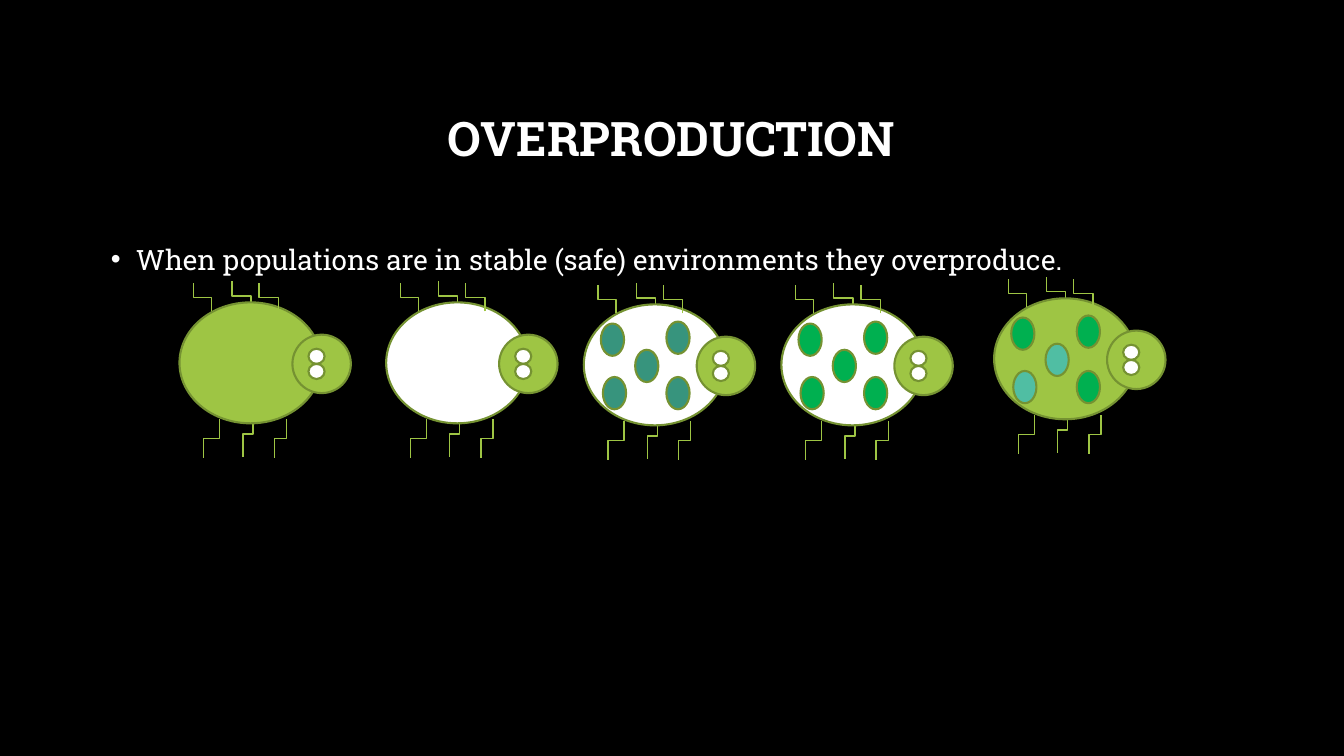
from lxml.etree import SubElement
from pptx import Presentation
from pptx.dml.color import RGBColor
from pptx.enum.shapes import MSO_CONNECTOR, MSO_SHAPE
from pptx.enum.text import MSO_ANCHOR, MSO_AUTO_SIZE, PP_ALIGN
from pptx.oxml.ns import qn
from pptx.util import Inches, Pt

TITLE = "OVERPRODUCTION"
POINT = "When populations are in stable (safe) environments they overproduce."
FONT = "Roboto Slab"
COLORS = {
    "black": "000000", "white": "FFFFFF", "lime": "9EC544", "olive": "759232",
    "teal": "37947D", "green": "00B050", "aqua": "50BEA3",
}

# Each bug: left, top, body colour, spot colours
BUGS = [
    (1.78, 3.00, "lime", []),
    (3.83, 3.00, "white", []),
    (5.79, 3.02, "white", ["teal"] * 5),
    (7.75, 3.02, "white", ["green"] * 5),
    (9.86, 2.96, "lime", ["green", "aqua", "green", "aqua", "green"]),
]

# Parts of a bug, measured from the top left of its body
BODY_SIZE, HEAD_SIZE = (1.41, 1.2), (0.58, 0.58)
EYE_SIZE, SPOT_SIZE = (0.16, 0.15), (0.23, 0.32)
HEAD = (1.12, 0.32)
EYES = [(1.28, 0.46), (1.28, 0.61)]
SPOTS = [(0.17, 0.19), (0.51, 0.45), (0.82, 0.17), (0.19, 0.72), (0.82, 0.72)]
# Legs: start x, start y, end x, end y
MIDDLE_LEGS = [(0.71, 0.08, 0.52, -0.21), (0.73, 1.08, 0.63, 1.53)]
OUTER_LEGS = [
    (0.32, 0.09, 0.14, -0.19), (0.98, 0.09, 0.79, -0.19),
    (0.40, 1.16, 0.24, 1.54), (1.06, 1.16, 0.94, 1.54),
]


def color(name):
    return RGBColor.from_string(COLORS[name])


def add_span(para, text, size, bold=False):
    span = para.add_run()
    span.text = text
    span.font.name, span.font.size, span.font.bold = FONT, Pt(size), bold
    span.font.color.rgb = color("white")


def add_oval(bug, left, top, size, fill):
    oval = bug.shapes.add_shape(
        MSO_SHAPE.OVAL, Inches(left), Inches(top), *map(Inches, size))
    oval.shadow.inherit = False
    oval.fill.solid()
    oval.fill.fore_color.rgb = color(fill)
    oval.line.color.rgb = color("olive")
    oval.line.width = Pt(1.5)


def add_leg(bug, x1, y1, x2, y2):
    """Elbow that leaves and arrives vertically: a quarter-turned connector."""
    upward = y2 < y1
    middle_x, middle_y = (x1 + x2) / 2, (y1 + y2) / 2
    half_length = abs(y2 - y1) / 2
    half_step = abs(x2 - x1) / 2 * (-1 if upward else 1)
    leg = bug.shapes.add_connector(
        MSO_CONNECTOR.ELBOW,
        Inches(middle_x - half_length), Inches(middle_y - half_step),
        Inches(middle_x + half_length), Inches(middle_y + half_step))
    leg.line.color.rgb = color("lime")
    leg.line.width = Pt(1)
    properties = leg.element.spPr
    properties.find(qn("a:xfrm")).set("rot", str((270 if upward else 90) * 60000))
    SubElement(properties, qn("a:effectLst"))


def add_bug(page, left, top, fill, spot_fills):
    bug = page.shapes.add_group_shape()

    def add_legs(legs):
        for x1, y1, x2, y2 in legs:
            add_leg(bug, left + x1, top + y1, left + x2, top + y2)

    add_legs(MIDDLE_LEGS)
    add_oval(bug, left, top, BODY_SIZE, fill)
    add_oval(bug, left + HEAD[0], top + HEAD[1], HEAD_SIZE, "lime")
    add_legs(OUTER_LEGS)
    for x, y in EYES:
        add_oval(bug, left + x, top + y, EYE_SIZE, "white")
    for (x, y), spot_fill in zip(SPOTS, spot_fills):
        add_oval(bug, left + x, top + y, SPOT_SIZE, spot_fill)


def main():
    deck = Presentation()
    deck.slide_width, deck.slide_height = Inches(13.33), Inches(7.5)
    page = deck.slides.add_slide(deck.slide_layouts[5])
    page.background.fill.solid()
    page.background.fill.fore_color.rgb = color("black")

    # Title
    title = page.shapes.title
    title.left, title.top = Inches(1), Inches(0.67)
    title.width, title.height = Inches(11.32), Inches(1.45)
    title.text_frame.auto_size = MSO_AUTO_SIZE.NONE
    title.text_frame.vertical_anchor = MSO_ANCHOR.MIDDLE
    para = title.text_frame.paragraphs[0]
    para.alignment, para.line_spacing = PP_ALIGN.CENTER, 0.9
    add_span(para, TITLE, 34, bold=True)

    # Bullet point
    box = page.shapes.add_textbox(
        Inches(1), Inches(2.29), Inches(11.32), Inches(4.04))
    box.text_frame.word_wrap = True
    para = box.text_frame.paragraphs[0]
    para.line_spacing, para.space_before = 1.2, Pt(10)
    settings = para._p.get_or_add_pPr()
    settings.set("marL", str(Inches(0.25)))
    settings.set("indent", str(Inches(-0.25)))
    SubElement(settings, qn("a:buFont")).set("typeface", "Arial")
    SubElement(settings, qn("a:buChar")).set("char", "•")
    add_span(para, POINT, 20)

    # Row of bugs
    for bug in BUGS:
        add_bug(page, *bug)

    deck.save("out.pptx")


if __name__ == "__main__":
    main()
